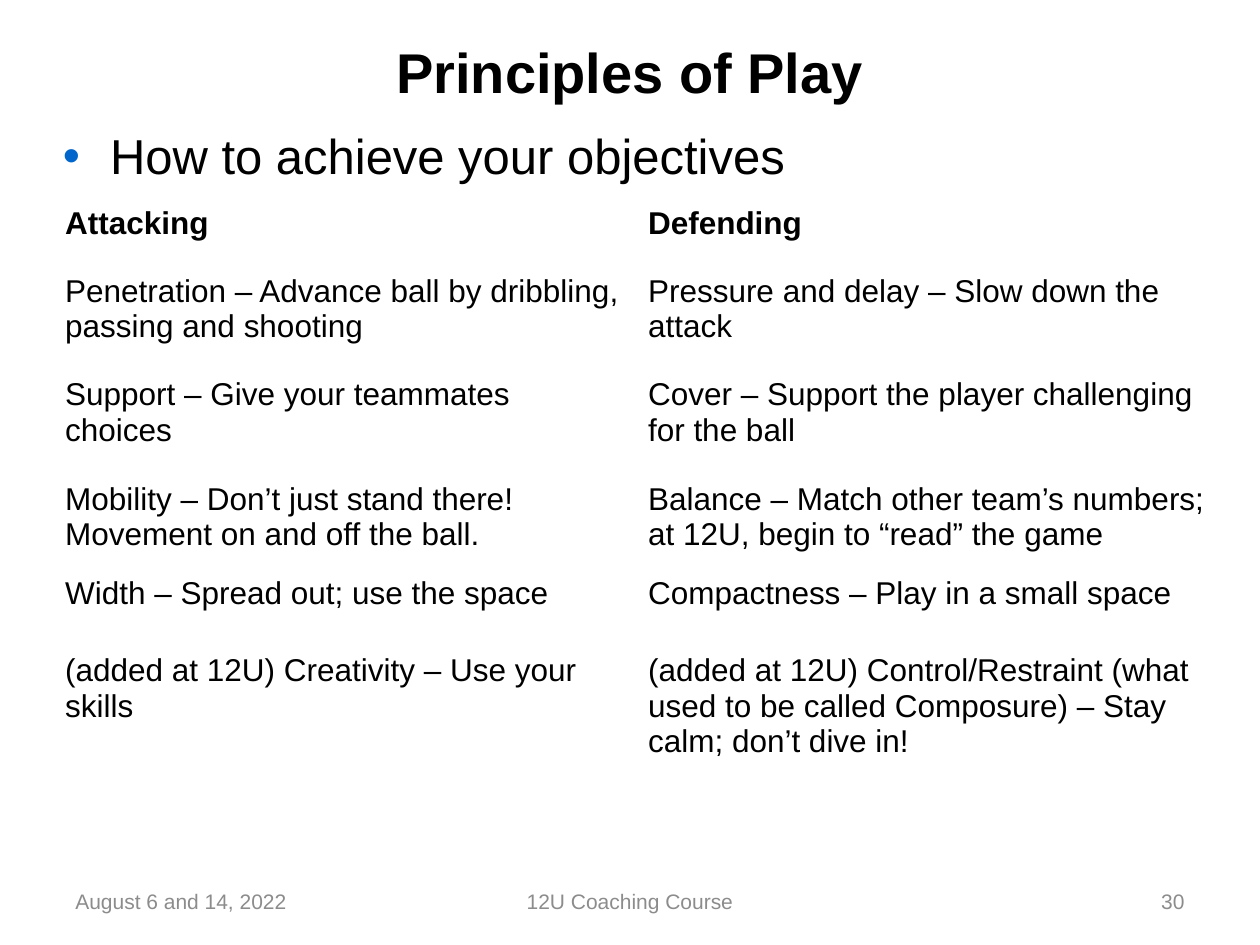
from lxml.etree import SubElement
from pptx import Presentation
from pptx.dml.color import RGBColor
from pptx.enum.text import MSO_ANCHOR as Anchor, PP_ALIGN as Align
from pptx.oxml.ns import qn
from pptx.util import Cm, Pt

COLORS = {"text": "000000", "footer": "8C8C8C", "bullet": "0066CC", "border": "FFFFFF"}
BORDERS = {"a:lnL": 1, "a:lnR": 1, "a:lnT": 1, "a:lnB": 3}
TABLE_LEFT, COLUMN_WIDTH = 1.06, 11.75


def write(paragraph, text, size, color="text", bold=False):
    paragraph.text = text
    font = paragraph.runs[0].font
    for name, value in {"name": "Arial", "size": Pt(size), "bold": bold}.items():
        setattr(font, name, value)
    font.color.rgb = RGBColor.from_string(COLORS[color])


def add_text(box, text, size, align, anchor, margins, **style):
    """Add a text box; box is left, top, width, height and margins is x, y, all in cm."""
    shape = slide.shapes.add_textbox(*map(Cm, box))
    side, end = map(Cm, margins)
    frame = shape.text_frame
    frame_format = {
        "word_wrap": True, "vertical_anchor": anchor,
        "margin_left": side, "margin_right": side, "margin_top": end, "margin_bottom": end,
    }
    for name, value in frame_format.items():
        setattr(frame, name, value)
    paragraph = frame.paragraphs[0]
    paragraph.alignment = align
    write(paragraph, text, size, **style)
    return paragraph


presentation = Presentation()
presentation.slide_width, presentation.slide_height = Cm(25.4), Cm(19.05)
slide = presentation.slides.add_slide(presentation.slide_layouts[6])

# Title and lead bullet
add_text((1.27, 0.76, 22.86, 1.35), "Principles of Play", 32,
         Align.CENTER, Anchor.MIDDLE, (0, 0), bold=True)
lead = add_text((1.27, 2.54, 23.5, 14.48), "How to achieve your objectives", 28,
                Align.LEFT, Anchor.TOP, (0, 0))
properties = lead._p.get_or_add_pPr()
properties.set("marL", str(Cm(0.95)))
properties.set("indent", str(-Cm(0.95)))
bullet_color = SubElement(properties, qn("a:buClr"))
SubElement(bullet_color, qn("a:srgbClr"), val=COLORS["bullet"])
SubElement(properties, qn("a:buFont"), typeface="Arial")
SubElement(properties, qn("a:buChar"), char="•")

# Footer
footers = [
    (1.27, 5.93, "August 6 and 14, 2022", Align.LEFT),
    (8.68, 8.04, "12U Coaching Course", Align.CENTER),
    (18.2, 5.93, "30", Align.RIGHT),
]
for left, width, text, align in footers:
    add_text((left, 17.66, width, 1.01), text, 12, align, Anchor.MIDDLE,
             (0.25, 0.13), color="footer")

# One single-row table per pair of principles: top, height, attacking, defending
principles = [
    (4.02, 1.04, "Attacking", "Defending"),
    (5.39, 1.78, "Penetration – Advance ball by dribbling, passing and shooting",
     "Pressure and delay – Slow down the attack"),
    (7.48, 1.78, "Support – Give your teammates choices",
     "Cover – Support the player challenging for the ball"),
    (9.58, 1.78, "Mobility – Don’t just stand there! Movement on and off the ball.",
     "Balance – Match other team’s numbers; at 12U, begin to “read” the game"),
    (11.49, 1.04, "Width – Spread out; use the space", "Compactness – Play in a small space"),
    (13.04, 2.54, "(added at 12U) Creativity – Use your skills",
     "(added at 12U) Control/Restraint (what used to be called Composure) – "
     "Stay calm; don’t dive in!"),
]
for top, height, *pair in principles:
    table = slide.shapes.add_table(1, 2, Cm(TABLE_LEFT), Cm(top),
                                   Cm(2 * COLUMN_WIDTH), Cm(height)).table
    table.horz_banding = False
    table.first_row = False
    for cell, text in zip(table.iter_cells(), pair):
        write(cell.text_frame.paragraphs[0], text, 18, bold=text == pair[0] == "Attacking"
              or text == "Defending")
        cell_properties = cell._tc.get_or_add_tcPr()
        for tag, width in BORDERS.items():
            line = SubElement(cell_properties, qn(tag), w=str(Pt(width)))
            fill = SubElement(line, qn("a:solidFill"))
            SubElement(fill, qn("a:srgbClr"), val=COLORS["border"])
        cell.fill.background()

presentation.save("out.pptx")
